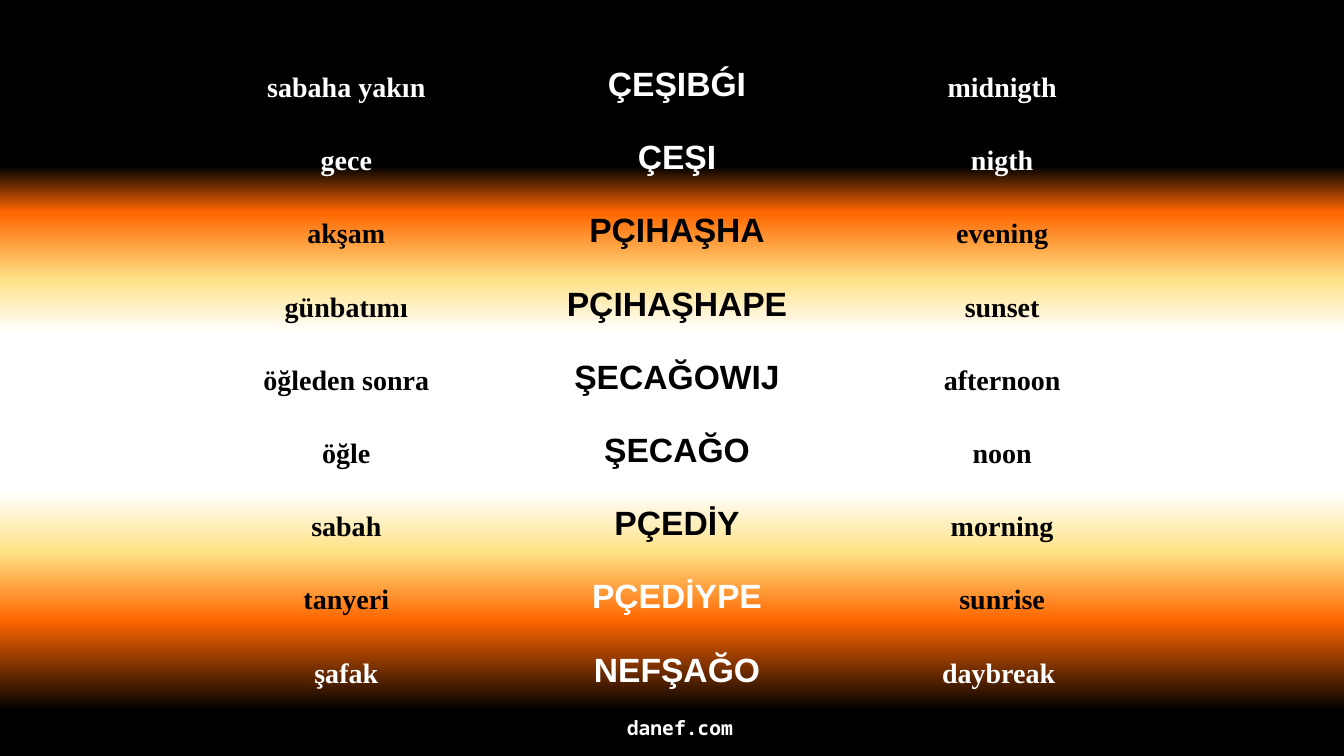
from lxml import etree
from pptx import Presentation
from pptx.dml.color import RGBColor
from pptx.enum.text import MSO_ANCHOR as Anchor, PP_ALIGN as Align
from pptx.oxml.ns import qn
from pptx.util import Inches, Pt

BLACK, WHITE = "000000", "FFFFFF"
SKY_STOPS = [
    (22, BLACK), (28, "FF6600"), (37, "FFE288"), (44, WHITE),
    (65, WHITE), (73, "FFE285"), (82, "FF6600"), (94, BLACK),
]
DAY_PARTS = [
    ("sabaha yakın", "ÇEŞIBǴI", "midnigth", WHITE, WHITE),
    ("gece", "ÇEŞI", "nigth", WHITE, WHITE),
    ("akşam", "PÇIHAŞHA", "evening", BLACK, BLACK),
    ("günbatımı", "PÇIHAŞHAPE", "sunset", BLACK, BLACK),
    ("öğleden sonra", "ŞECAĞOWIJ", "afternoon", BLACK, BLACK),
    ("öğle", "ŞECAĞO", "noon", BLACK, BLACK),
    ("sabah", "PÇEDİY", "morning", BLACK, BLACK),
    ("tanyeri", "PÇEDİYPE", "sunrise", BLACK, WHITE),
    ("şafak", "NEFŞAĞO", "daybreak ", WHITE, WHITE),
]
COLUMN_WIDTHS = [2.91, 3.65, 2.8]
NO_GRID_STYLE = "{2D5ABB26-0587-4C30-8999-92F81FD0307C}"


def color(value):
    return RGBColor.from_string(value)


def write_centered(frame, text, size, font_name, text_color):
    para = frame.paragraphs[0]
    para.text = text
    para.alignment = Align.CENTER
    font = para.runs[0].font
    font.size, font.name, font.bold = Pt(size), font_name, True
    font.color.rgb = color(text_color)


def paint_sky(slide):
    fill = slide.background.fill
    fill.gradient()
    fill.gradient_angle = 270
    stops = next(slide.element.iter(qn("a:gsLst")))
    for stop in list(stops):
        stops.remove(stop)
    for percent, value in SKY_STOPS:
        stop = etree.SubElement(stops, qn("a:gs"), pos=str(percent * 1000))
        etree.SubElement(stop, qn("a:srgbClr"), val=value)


def clear_cell(cell):
    cell.fill.background()
    cell.vertical_anchor = Anchor.BOTTOM
    cell.margin_left = cell.margin_right = cell.margin_top = Inches(0.01)
    cell.margin_bottom = 0
    properties = cell._tc.get_or_add_tcPr()
    for position, side in enumerate(("lnL", "lnR", "lnT", "lnB")):
        border = etree.Element(qn(f"a:{side}"))
        etree.SubElement(border, qn("a:noFill"))
        properties.insert(position, border)


def add_day_table(slide, left, top, width, height):
    table = slide.shapes.add_table(
        len(DAY_PARTS), len(COLUMN_WIDTHS),
        Inches(left), Inches(top), Inches(width), Inches(height),
    ).table
    table.first_row = table.horz_banding = False
    next(table._tbl.iter(qn("a:tableStyleId"))).text = NO_GRID_STYLE
    for column, column_width in zip(table.columns, COLUMN_WIDTHS):
        column.width = Inches(column_width)
    for row, (turkish, circassian, english, side, middle) in zip(table.rows, DAY_PARTS):
        words = [
            (turkish, 20, "Times New Roman", side),
            (circassian, 24, "Arial", middle),
            (english, 20, "Times New Roman", side),
        ]
        for cell, word in zip(row.cells, words):
            clear_cell(cell)
            write_centered(cell.text_frame, *word)


def add_footer(slide, left, top, width, height):
    box = slide.shapes.add_textbox(Inches(left), Inches(top), Inches(width), Inches(height))
    frame = box.text_frame
    frame.word_wrap = True
    frame.vertical_anchor = Anchor.MIDDLE
    write_centered(frame, "danef.com", 14, "Noto Sans Mono", WHITE)


def main():
    deck = Presentation()
    deck.slide_width, deck.slide_height = Inches(13.33), Inches(7.5)
    slide = deck.slides.add_slide(deck.slide_layouts[6])
    paint_sky(slide)
    add_footer(slide, 3.36, 7.06, 6.77, 0.31)
    add_day_table(slide, 1.98, 0.3, sum(COLUMN_WIDTHS), 6.54)
    deck.save("out.pptx")


if __name__ == "__main__":
    main()
